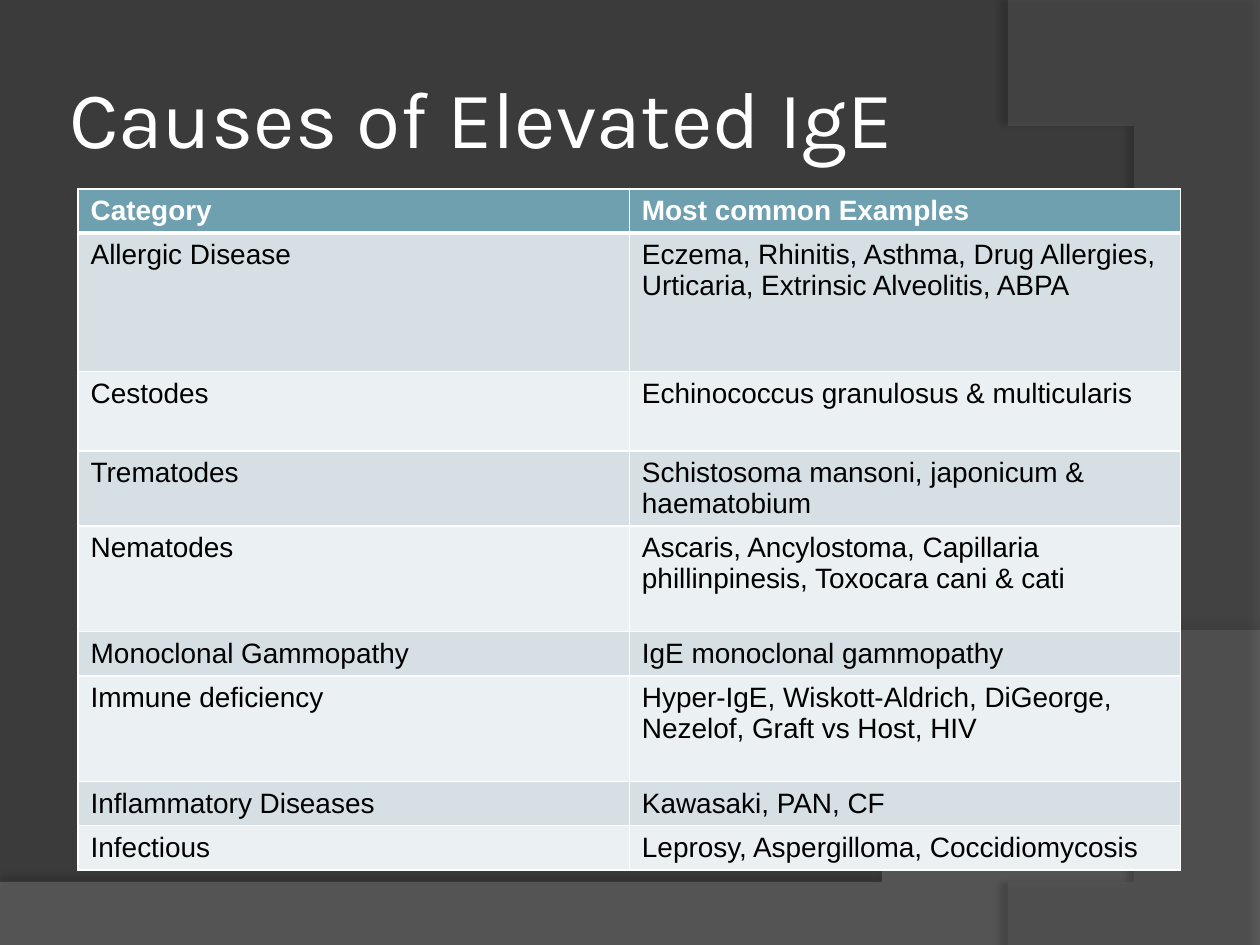
from lxml.etree import SubElement
from pptx import Presentation
from pptx.dml.color import RGBColor
from pptx.enum.text import MSO_ANCHOR, MSO_AUTO_SIZE, PP_ALIGN
from pptx.oxml.ns import qn
from pptx.util import Inches, Pt

COLORS = {
    "background": "3B3B3B", "wave": "7F7F7F", "arc": "5E5E5E",
    "white": "FFFFFF", "black": "000000",
    "header": "6EA0B0", "band_dark": "D5DFE4", "band_light": "EBF0F2",
}
ROWS = [
    ("Category", "Most common Examples", 0.35),
    ("Allergic Disease",
     "Eczema, Rhinitis, Asthma, Drug Allergies, Urticaria, Extrinsic Alveolitis, ABPA", 1.1),
    ("Cestodes", "Echinococcus granulosus & multicularis", 0.63),
    ("Trematodes", "Schistosoma mansoni, japonicum & haematobium", 0.59),
    ("Nematodes",
     "Ascaris, Ancylostoma, Capillaria phillinpinesis, Toxocara cani & cati", 0.84),
    ("Monoclonal Gammopathy", "IgE monoclonal gammopathy", 0.35),
    ("Immune deficiency",
     "Hyper-IgE, Wiskott-Aldrich, DiGeorge, Nezelof, Graft vs Host, HIV", 0.84),
    ("Inflammatory Diseases", "Kawasaki, PAN, CF", 0.35),
    ("Infectious", "Leprosy, Aspergilloma, Coccidiomycosis", 0.35),
]


def rgb(name):
    return RGBColor.from_string(COLORS[name])


def set_fill(fill, name):
    fill.solid()
    fill.fore_color.rgb = rgb(name)


def bezier(a, b, c, d, steps=60):
    """Points along a cubic curve from a to d."""
    points = []
    for i in range(steps + 1):
        t = i / steps
        weights = ((1 - t) ** 3, 3 * t * (1 - t) ** 2, 3 * t * t * (1 - t), t ** 3)
        points.append(tuple(sum(w * p[k] for w, p in zip(weights, (a, b, c, d)))
                            for k in (0, 1)))
    return points


def add_swoosh(s, points, color, opacity, shadow_opacity, distance, angle):
    builder = s.shapes.build_freeform(*points[0], scale=Inches(1))
    builder.add_line_segments(points[1:], close=True)
    sp = builder.convert_to_shape()
    set_fill(sp.fill, color)
    sp.line.fill.background()
    sp.shadow.inherit = False
    # Transparent fill and outer shadow
    sp_pr = sp.element.spPr
    fill_color = sp_pr.find(qn("a:solidFill")).find(qn("a:srgbClr"))
    SubElement(fill_color, qn("a:alpha"), val=str(opacity * 1000))
    shadow = SubElement(sp_pr.find(qn("a:effectLst")), qn("a:outerShdw"),
                        blurRad=str(Pt(4)), dist=str(Pt(distance)),
                        dir=str(angle * 60000), algn="ctr", rotWithShape="0")
    shadow_color = SubElement(shadow, qn("a:srgbClr"), val=COLORS["black"])
    SubElement(shadow_color, qn("a:alpha"), val=str(shadow_opacity * 1000))


def format_title(s, text):
    title = s.shapes.title
    title.left, title.top = Inches(0.5), Inches(0.3)
    title.width, title.height = Inches(8.17), Inches(1.25)
    tf = title.text_frame
    tf.text = text
    tf.auto_size = MSO_AUTO_SIZE.NONE
    tf.vertical_anchor = MSO_ANCHOR.MIDDLE
    tf.margin_left = tf.margin_right = tf.margin_top = tf.margin_bottom = Inches(0.05)
    p = tf.paragraphs[0]
    p.alignment = PP_ALIGN.LEFT
    p.font.name, p.font.size = "Karla", Pt(46)
    p.font.color.rgb = rgb("white")
    # Bring the title in front of the swooshes
    title.element.getparent().append(title.element)


def set_borders(cell, top, bottom):
    tc_pr = cell._tc.get_or_add_tcPr()
    for side, width in (("L", 1), ("R", 1), ("T", top), ("B", bottom)):
        ln = SubElement(tc_pr, qn(f"a:ln{side}"), w=str(Pt(width)))
        SubElement(SubElement(ln, qn("a:solidFill")), qn("a:srgbClr"), val=COLORS["white"])


def format_cell(cell, text, row):
    is_header = row == 0
    set_borders(cell, top=3 if row == 1 else 1, bottom=3 if is_header else 1)
    band = "band_dark" if row % 2 else "band_light"
    set_fill(cell.fill, "header" if is_header else band)
    cell.text = text
    font = cell.text_frame.paragraphs[0].font
    font.name, font.size, font.bold = "Arial", Pt(16), is_header
    font.color.rgb = rgb("white" if is_header else "black")


def add_causes_table(s):
    height = sum(row[2] for row in ROWS)
    table = s.shapes.add_table(len(ROWS), 2, Inches(0.62), Inches(1.5),
                               Inches(8.75), Inches(height)).table
    for i, (category, examples, row_height) in enumerate(ROWS):
        table.rows[i].height = Inches(row_height)
        for j, text in enumerate((category, examples)):
            format_cell(table.cell(i, j), text, i)


def main():
    prs = Presentation()
    prs.slide_width, prs.slide_height = Inches(10), Inches(7.5)
    s = prs.slides.add_slide(prs.slide_layouts[5])
    set_fill(s.background.fill, "background")

    # Background swooshes
    wave = bezier((10, 5.2), (5.59, 7.29), (3.91, 7.19), (0, 7.05))
    add_swoosh(s, wave + [(0, 7.5), (10, 7.5)], "wave", 45, 35, 3.5, 270)
    arc = bezier((8.21, 7.5), (9.35, 6.19), (10.18, 3), (8, 0))
    add_swoosh(s, arc + [(10, 0.02), (10, 7.5)], "arc", 40, 45, 4, 180)

    # Content
    format_title(s, "Causes of Elevated IgE")
    add_causes_table(s)
    prs.save("out.pptx")


if __name__ == "__main__":
    main()
